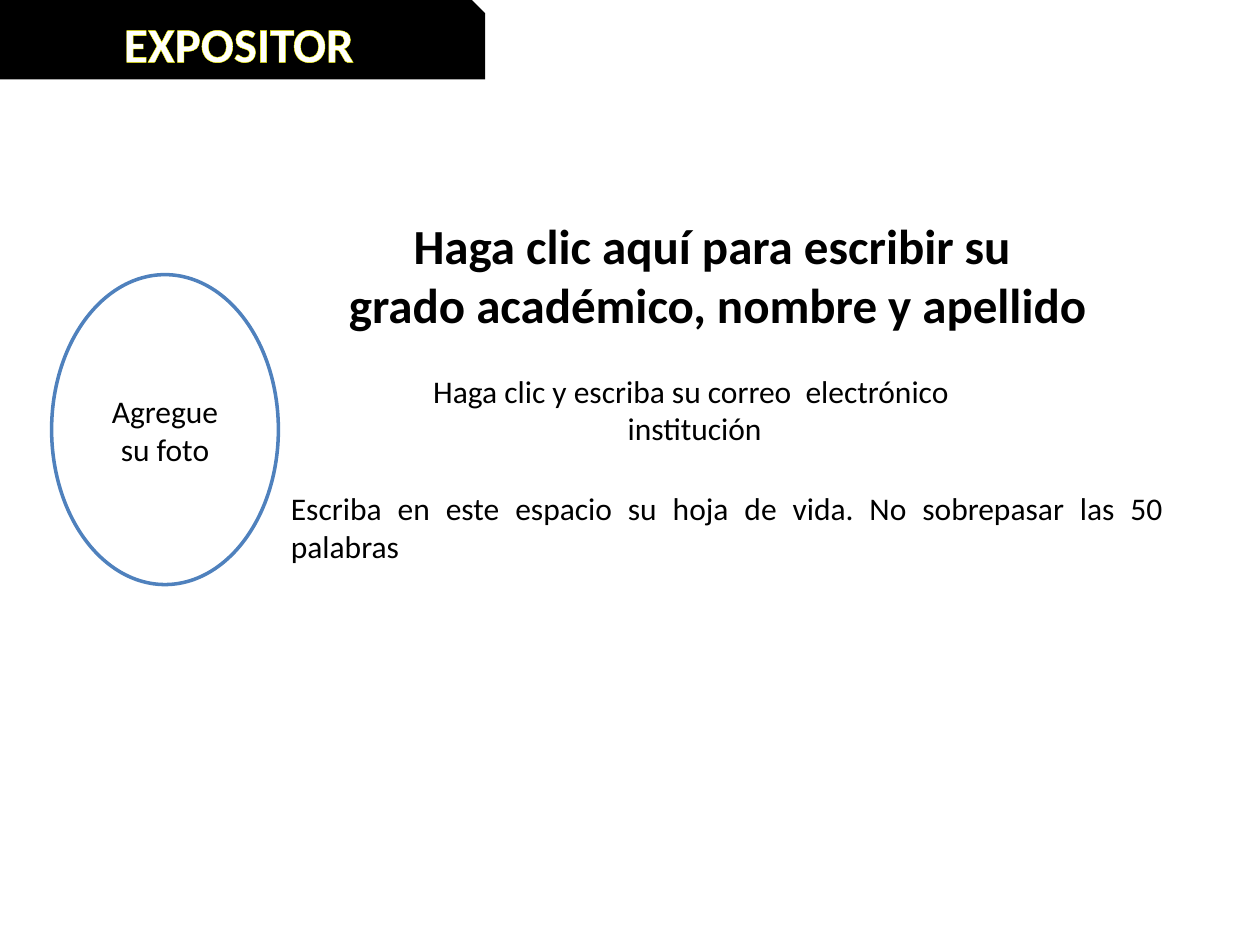
from lxml import etree
from pptx import Presentation
from pptx import util as u
from pptx.dml.color import RGBColor
from pptx.enum import shapes, text
from pptx.oxml.ns import qn

MID, JUST = text.PP_ALIGN.CENTER, text.PP_ALIGN.JUSTIFY


def tint(code):
    return RGBColor.from_string(code)


def edge(run, code, width):
    """Outline the letters of a run."""
    line = etree.Element(qn("a:ln"), w=str(u.Pt(width)))
    fill = etree.SubElement(line, qn("a:solidFill"))
    etree.SubElement(fill, qn("a:srgbClr"), val=code)
    run._r.get_or_add_rPr().insert(0, line)


class Deck:
    face = "Calibri"
    ink = "000000"
    paper = "FFFFFF"
    blue = "4F81BD"
    glow = "FFFF00"
    body, head = 18, 28

    def __init__(self):
        self.show = Presentation()
        self.show.slide_width = u.Inches(10)
        self.show.slide_height = u.Inches(7.5)
        self.slide = self.show.slides.add_slide(self.show.slide_layouts[5])

    def label(self, frame, lines, size, align=MID, bold=False, color=ink, rim=None):
        frame.word_wrap = True
        for i, line in enumerate(lines):
            para = frame.add_paragraph() if i else frame.paragraphs[0]
            para.alignment = align
            run = para.add_run()
            run.text = line
            font = run.font
            font.name, font.size, font.bold = self.face, u.Pt(size), bold
            font.color.rgb = tint(color)
            if rim:
                edge(run, *rim)

    def shape(self, kind, box, fill, line=None):
        item = self.slide.shapes.add_shape(kind, *map(u.Inches, box))
        item.shadow.inherit = False
        item.fill.solid()
        item.fill.fore_color.rgb = tint(fill)
        if line:
            item.line.color.rgb = tint(line)
            item.line.width = u.Pt(2)
        else:
            item.line.fill.background()
        item.text_frame.vertical_anchor = text.MSO_ANCHOR.MIDDLE
        return item

    def title(self, words, box):
        item = self.slide.shapes.title
        item.left, item.top, item.width, item.height = map(u.Inches, box)
        frame = item.text_frame
        frame.auto_size = text.MSO_AUTO_SIZE.NONE
        frame.vertical_anchor = text.MSO_ANCHOR.MIDDLE
        self.label(frame, [words], self.head, bold=True, color=self.paper,
                   rim=(self.glow, 0.9))
        # Bring the title in front of its banner.
        self.slide.shapes._spTree.append(item._element)

    def note(self, lines, box, size, **style):
        item = self.slide.shapes.add_textbox(*map(u.Inches, box))
        self.label(item.text_frame, lines, size, **style)
        item.text_frame.auto_size = text.MSO_AUTO_SIZE.SHAPE_TO_FIT_TEXT


def main():
    deck = Deck()
    kind = shapes.MSO_SHAPE
    photo = deck.shape(kind.OVAL, (0.41, 2.18, 1.8, 2.46), deck.paper, deck.blue)
    deck.label(photo.text_frame, ["Agregue su foto"], deck.body)
    deck.note(["Escriba en este espacio su hoja de vida. No sobrepasar las 50 palabras"],
              (2.21, 3.83, 7.12, 0.71), deck.body, align=JUST)
    deck.note(["Haga clic aquí para escribir su ", "grado académico, nombre y apellido"],
              (2.21, 1.66, 6.97, 1.04), deck.head, bold=True)
    deck.note(["Haga clic y escriba su correo  electrónico", " institución"],
              (2.51, 2.9, 5.95, 0.71), deck.body, rim=(deck.ink, 0.75))
    deck.shape(kind.SNIP_1_RECTANGLE, (-0.01, 0, 3.86, 0.63), deck.ink)
    deck.title("EXPOSITOR", (-0.01, 0.05, 3.81, 0.58))
    deck.show.save("out.pptx")


if __name__ == "__main__":
    main()
